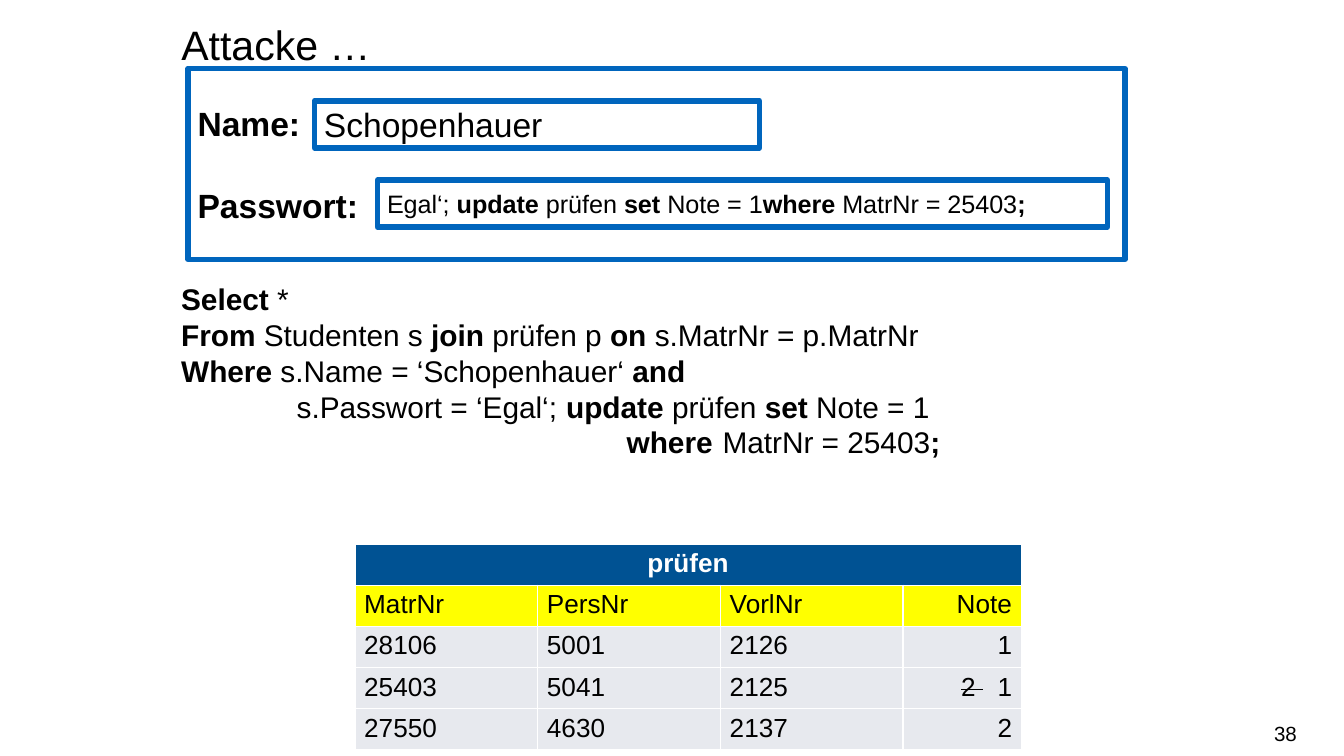
from pptx import Presentation
from pptx.dml.color import RGBColor
from pptx.enum.shapes import MSO_SHAPE
from pptx.enum.text import MSO_ANCHOR, MSO_AUTO_SIZE, PP_ALIGN
from pptx.util import Inches, Pt

BLACK = RGBColor(0x00, 0x00, 0x00)
WHITE = RGBColor(0xFF, 0xFF, 0xFF)
BLUE = RGBColor(0x00, 0x65, 0xBD)
NAVY = RGBColor(0x00, 0x52, 0x93)
YELLOW = RGBColor(0xFF, 0xFF, 0x00)
GREY = RGBColor(0xE7, 0xE9, 0xEE)

# Text between asterisk pairs is bold.
TITLE = "Attacke …"
LABELS = ["**Name:**", "**Passwort:**"]
NAME = ["Schopenhauer"]
PASSWORD = ["Egal‘; **update **prüfen **set **Note = 1**where **MatrNr = 25403**;**"]
QUERY = [
    "**Select** *",
    "**From **Studenten s **join** prüfen p **on **s.MatrNr = p.MatrNr",
    "**Where **s.Name = ‘Schopenhauer‘ **and**",
    "              s.Passwort = ‘Egal‘; **update **prüfen **set **Note = 1",
    "**                                                      where **MatrNr = 25403**;**",
]
TABLE_NAME = "prüfen"
COLUMNS = [("MatrNr", 1.36), ("PersNr", 1.36), ("VorlNr", 1.36), ("Note", 0.88)]
ROWS = [
    ("28106", "5001", "2126", "1"),
    ("25403", "5041", "2125", "1"),
    ("27550", "4630", "2137", "2"),
]
OLD_GRADE, ATTACKED_ROW = "2 ", 1
ROW_HEIGHT = 0.3
PAGE_NUMBER = "38"


def set_font(font, size, color=BLACK):
    font.name, font.size, font.color.rgb = "Arial", Pt(size), color


def write(frame, lines, size, align=PP_ALIGN.LEFT, spacing=None, gap=0):
    for index, line in enumerate(lines):
        para = frame.paragraphs[0] if index == 0 else frame.add_paragraph()
        para.alignment = align
        if spacing:
            para.line_spacing = spacing
        if index and gap:
            para.space_before = Pt(gap)
        set_font(para.font, size)
        for part, text in enumerate(line.split("**")):
            if text:
                span = para.add_run()
                span.text = text
                span.font.bold = part % 2 == 1


def set_insets(target, side, top):
    target.margin_left = target.margin_right = side
    target.margin_top = target.margin_bottom = top


def add_frame(page, place, lines, size, gap=0):
    box = page.shapes.add_shape(MSO_SHAPE.RECTANGLE, *map(Inches, place))
    box.shadow.inherit = False
    box.fill.background()
    box.line.color.rgb = BLUE
    box.line.width = Pt(3)
    frame = box.text_frame
    frame.word_wrap = False
    frame.vertical_anchor = MSO_ANCHOR.MIDDLE
    set_insets(frame, Inches(0.07), Inches(0.04))
    write(frame, lines, size, gap=gap)


def add_text(page, place, lines, size, **layout):
    frame = page.shapes.add_textbox(*map(Inches, place)).text_frame
    frame.word_wrap = True
    write(frame, lines, size, **layout)
    return frame


def add_span(para, text, color=BLACK, bold=False):
    span = para.add_run()
    span.text = text
    set_font(span.font, 14, color)
    span.font.bold = bold
    return span


def start_cell(cell, fill, align):
    """Fill the cell and return its empty paragraph."""
    cell.fill.solid()
    cell.fill.fore_color.rgb = fill
    set_insets(cell, Inches(0.07), Pt(2.6))
    para = cell.text_frame.paragraphs[0]
    para.alignment = align
    return para


def add_grades(page):
    width = sum(size for _, size in COLUMNS)
    count = len(ROWS) + 2
    last = len(COLUMNS) - 1
    table = page.shapes.add_table(
        count, len(COLUMNS), Inches(2.64), Inches(4.05),
        Inches(width), Inches(count * ROW_HEIGHT)).table
    table.horz_banding = False
    for column, (_, size) in zip(table.columns, COLUMNS):
        column.width = Inches(size)
    table.cell(0, 0).merge(table.cell(0, last))
    heading = start_cell(table.cell(0, 0), NAVY, PP_ALIGN.CENTER)
    add_span(heading, TABLE_NAME, WHITE, True)

    header = [name for name, _ in COLUMNS]
    for row, values in enumerate([header, *ROWS], start=1):
        for column, text in enumerate(values):
            para = start_cell(table.cell(row, column), YELLOW if row == 1 else GREY,
                              PP_ALIGN.RIGHT if column == last else PP_ALIGN.LEFT)
            if row == ATTACKED_ROW + 2 and column == last:
                old = add_span(para, OLD_GRADE)
                old.font._element.set("strike", "sngStrike")
                space = add_span(para, " ")
                space.font._element.set("spc", "390")
            add_span(para, text)


def main():
    deck = Presentation()
    deck.slide_width = Inches(10)
    deck.slide_height = deck.slide_width * 9 // 16
    page = deck.slides.add_slide(deck.slide_layouts[5])

    title = page.shapes.title
    title.left, title.top, title.width, title.height = map(Inches, (1.25, 0, 7.5, 0.51))
    title.text_frame.auto_size = MSO_AUTO_SIZE.NONE
    title.text_frame.vertical_anchor = MSO_ANCHOR.TOP
    write(title.text_frame, [TITLE], 22, spacing=1.25)

    add_text(page, (1.25, 2.04, 7.5, 3.46), QUERY, 16)
    add_grades(page)
    add_frame(page, (1.4, 0.51, 6.97, 1.42), LABELS, 18, gap=22)
    add_frame(page, (2.34, 0.75, 3.31, 0.35), NAME, 18)
    add_frame(page, (2.81, 1.34, 5.43, 0.35), PASSWORD, 13.5)

    number = add_text(page, (7.41, 5.31, 2.24, 0.3), [PAGE_NUMBER], 11, align=PP_ALIGN.RIGHT)
    number.vertical_anchor = MSO_ANCHOR.MIDDLE
    set_insets(number, 0, Inches(0.05))
    deck.save("out.pptx")


if __name__ == "__main__":
    main()
